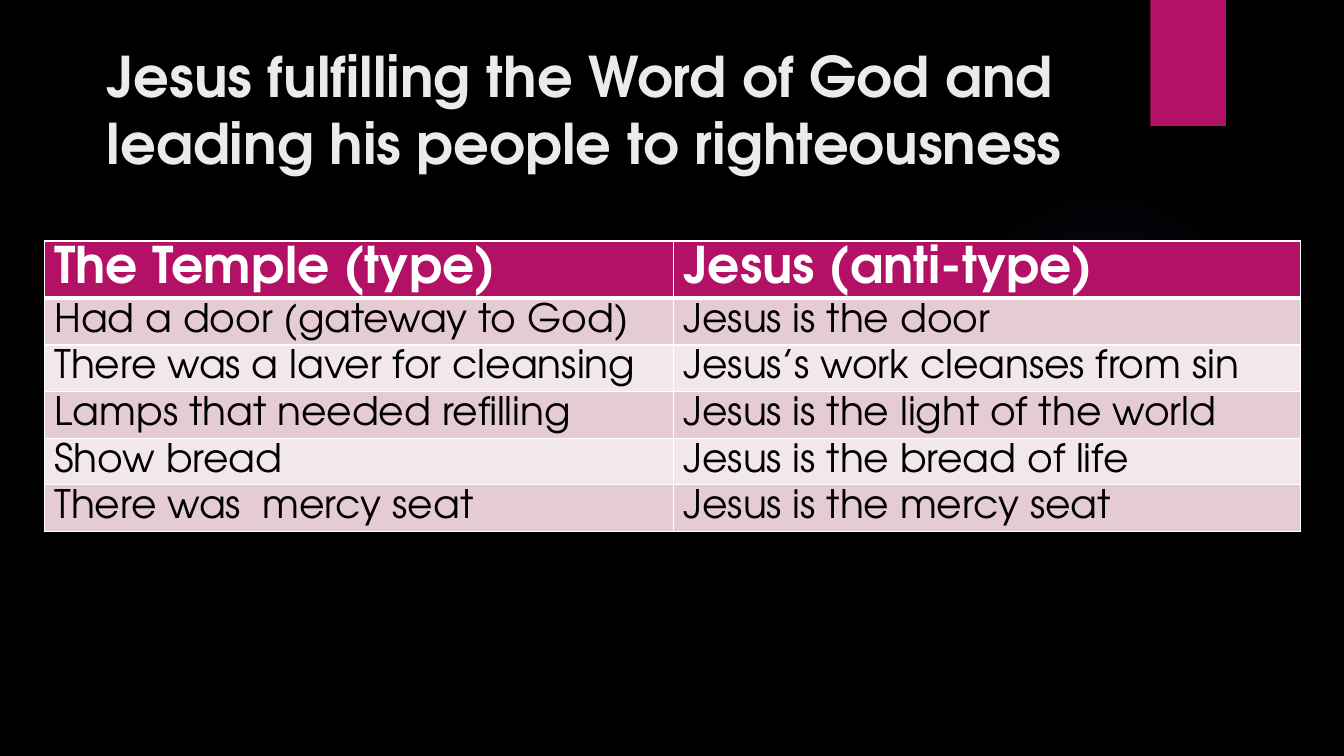
from lxml import etree
from pptx import Presentation
from pptx.dml.color import RGBColor as RGB
from pptx.enum.shapes import MSO_SHAPE as Kind
from pptx.enum.text import MSO_ANCHOR as Anchor, PP_ALIGN as Align
from pptx.oxml import parse_xml
from pptx.oxml.ns import nsdecls, qn
from pptx.util import Inches, Pt

HUES = {
    "back": "000000",
    "pink": "B31166",
    "glow": "9B6BF2",
    "title": "EBEBEB",
    "white": "FFFFFF",
    "dark": "E5CCD3",
    "light": "F2E7EA",
}
ROWS = [
    ("The Temple (type)", "Jesus (anti-type)"),
    ("Had a door (gateway to God)", "Jesus is the door"),
    ("There was a laver for cleansing", "Jesus’s work cleanses from sin"),
    ("Lamps that needed refilling", "Jesus is the light of the world"),
    ("Show bread", "Jesus is the bread of life"),
    ("There was  mercy seat", "Jesus is the mercy seat"),
]


def write(frame, text, size, hue, bold=False):
    para = frame.paragraphs[0]
    para.alignment = Align.LEFT
    run = para.add_run()
    run.text = text
    run.font.name = "TeX Gyre Adventor"
    run.font.size = Pt(size)
    run.font.bold = bold
    run.font.color.rgb = RGB.from_string(HUES[hue])


def edge(cell, side, width):
    line = etree.SubElement(cell._tc.get_or_add_tcPr(), qn(f"a:{side}"), w=str(Pt(width)))
    fill = etree.SubElement(line, qn("a:solidFill"))
    etree.SubElement(fill, qn("a:srgbClr"), val=HUES["white"])


deck = Presentation()
deck.slide_width = Inches(13.33)
deck.slide_height = Inches(7.5)
slide = deck.slides.add_slide(deck.slide_layouts[5])
slide.background.fill.solid()
slide.background.fill.fore_color.rgb = RGB.from_string(HUES["back"])
shapes = slide.shapes

glow = shapes.add_shape(Kind.OVAL, Inches(9.41), Inches(1.83), Inches(3.08), Inches(3.08))
glow.shadow.inherit = False
glow.line.fill.background()
stops = "".join(
    f'<a:gs pos="{pos}000"><a:srgbClr val="{HUES["glow"]}"><a:alpha val="{alpha}000"/></a:srgbClr></a:gs>'
    for pos, alpha in [(0, 7), (36, 6), (69, 0), (100, 0)]
)
glow._element.spPr.find(qn("a:prstGeom")).addnext(parse_xml(
    f'<a:gradFill {nsdecls("a")}><a:gsLst>{stops}</a:gsLst><a:path path="circle">'
    '<a:fillToRect l="50000" t="50000" r="50000" b="50000"/></a:path></a:gradFill>'
))

tab = shapes.add_shape(Kind.RECTANGLE, Inches(11.41), 0, Inches(0.75), Inches(1.25))
tab.shadow.inherit = False
tab.fill.solid()
tab.fill.fore_color.rgb = RGB.from_string(HUES["pink"])
tab.line.fill.background()

title = shapes.title
title.left, title.top = Inches(0.96), Inches(0.36)
title.width, title.height = Inches(10.29), Inches(1.53)
title.text_frame.word_wrap = True
title.text_frame.vertical_anchor = Anchor.MIDDLE
title.text_frame.margin_bottom = Inches(0.15)
write(title.text_frame, "Jesus fulfilling the Word of God and leading his people to righteousness",
      size=40, hue="title", bold=True)

table = shapes.add_table(len(ROWS), 2, Inches(0.44), Inches(2.39), Inches(12.46), Inches(2.87)).table
table.columns[0].width = Inches(6.24)
table.columns[1].width = Inches(6.22)
for r, texts in enumerate(ROWS):
    head = r == 0
    table.rows[r].height = Inches(0.57 if head else 0.46)
    for c, text in enumerate(texts):
        cell = table.cell(r, c)
        cell.margin_left = cell.margin_right = Inches(0.1)
        cell.margin_top = cell.margin_bottom = Inches(0.05)
        for side in ("lnL", "lnR", "lnT", "lnB"):
            thick = (head and side == "lnB") or (r == 1 and side == "lnT")
            edge(cell, side, 3 if thick else 1)
        cell.fill.solid()
        hue = "pink" if head else "dark" if r % 2 else "light"
        cell.fill.fore_color.rgb = RGB.from_string(HUES[hue])
        write(cell.text_frame, text, size=36 if head else 28,
              hue="white" if head else "back", bold=head)

deck.save("out.pptx")
